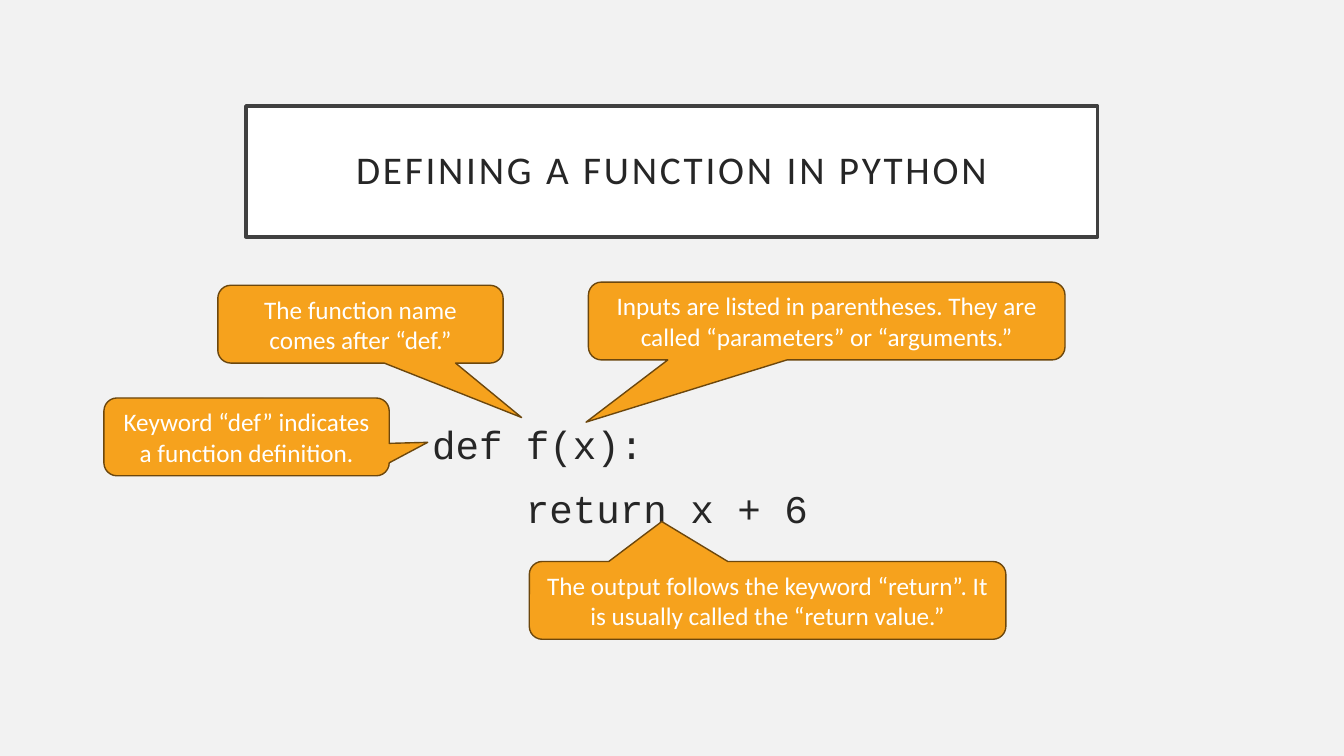
from pptx import Presentation
from pptx.dml.color import RGBColor
from pptx.enum import shapes, text
from pptx.util import Cm, Pt

BACKGROUND = RGBColor(0xF2, 0xF2, 0xF2)
WHITE = RGBColor(0xFF, 0xFF, 0xFF)
INK = RGBColor(0x26, 0x26, 0x26)
FRAME = RGBColor(0x40, 0x40, 0x40)
ORANGE = RGBColor(0xF6, 0xA2, 0x1D)
BROWN = RGBColor(0x6C, 0x47, 0x0D)

CALLOUT_HEIGHT = 1.96
NARROW, WIDE = 7.19, 12.01
CALLOUTS = [
    ("Keyword “def” indicates a function definition.",
     2.62, 10.03, NARROW, (0.635, 0.07)),
    ("The function name comes after “def.”",
     5.49, 7.19, NARROW, (0.565, 1.2)),
    ("Inputs are listed in parentheses. They are called “parameters” or “arguments.”",
     14.83, 7.11, WIDE, (-0.505, 1.3)),
    ("The output follows the keyword “return”. It is usually called the “return value.”",
     13.34, 14.15, WIDE, (-0.222, -1.014)),
]


def style_runs(p, font, size, color):
    for r in p.runs:
        r.font.name = font
        r.font.size = Pt(size)
        r.font.color.rgb = color


def add_box(s, kind, box, fill, line, width, content, size, color):
    sp = s.shapes.add_shape(kind, *map(Cm, box))
    sp.shadow.inherit = False
    sp.fill.solid()
    sp.fill.fore_color.rgb = fill
    sp.line.color.rgb = line
    sp.line.width = Pt(width)
    tf = sp.text_frame
    tf.text = content
    tf.word_wrap = True
    tf.vertical_anchor = text.MSO_ANCHOR.MIDDLE
    p = tf.paragraphs[0]
    p.alignment = text.PP_ALIGN.CENTER
    style_runs(p, "Calibri", size, color)
    return sp


def add_title(s, content):
    sp = add_box(s, shapes.MSO_SHAPE.RECTANGLE, (6.2, 2.67, 21.46, 3.3),
                 WHITE, FRAME, 2.5, content, 28, INK)
    tf = sp.text_frame
    tf.margin_left = tf.margin_right = tf.margin_top = tf.margin_bottom = Cm(0.51)
    p = tf.paragraphs[0]
    p.line_spacing = 0.9
    p.runs[0].font._element.set("spc", "200")


def add_code(s, content):
    sp = s.shapes.add_textbox(Cm(10.64), Cm(10.34), Cm(11.38), Cm(3.3))
    tf = sp.text_frame
    tf.text = content
    tf.word_wrap = True
    tf.vertical_anchor = text.MSO_ANCHOR.MIDDLE
    for i, p in enumerate(tf.paragraphs):
        if i:
            p.space_before = Pt(12)
        style_runs(p, "Courier New", 28, INK)


def add_callout(s, content, left, top, width, tip):
    sp = add_box(s, shapes.MSO_SHAPE.ROUNDED_RECTANGULAR_CALLOUT,
                 (left, top, width, CALLOUT_HEIGHT),
                 ORANGE, BROWN, 1, content, 18, WHITE)
    sp.adjustments[0], sp.adjustments[1] = tip


def main():
    prs = Presentation()
    prs.slide_width, prs.slide_height = Cm(33.87), Cm(19.05)
    s = prs.slides.add_slide(prs.slide_layouts[6])
    s.background.fill.solid()
    s.background.fill.fore_color.rgb = BACKGROUND
    add_title(s, "DEFINING A FUNCTION IN PYTHON")
    add_code(s, "def f(x):\n    return x + 6")
    for callout in CALLOUTS:
        add_callout(s, *callout)
    prs.save("out.pptx")


if __name__ == "__main__":
    main()
